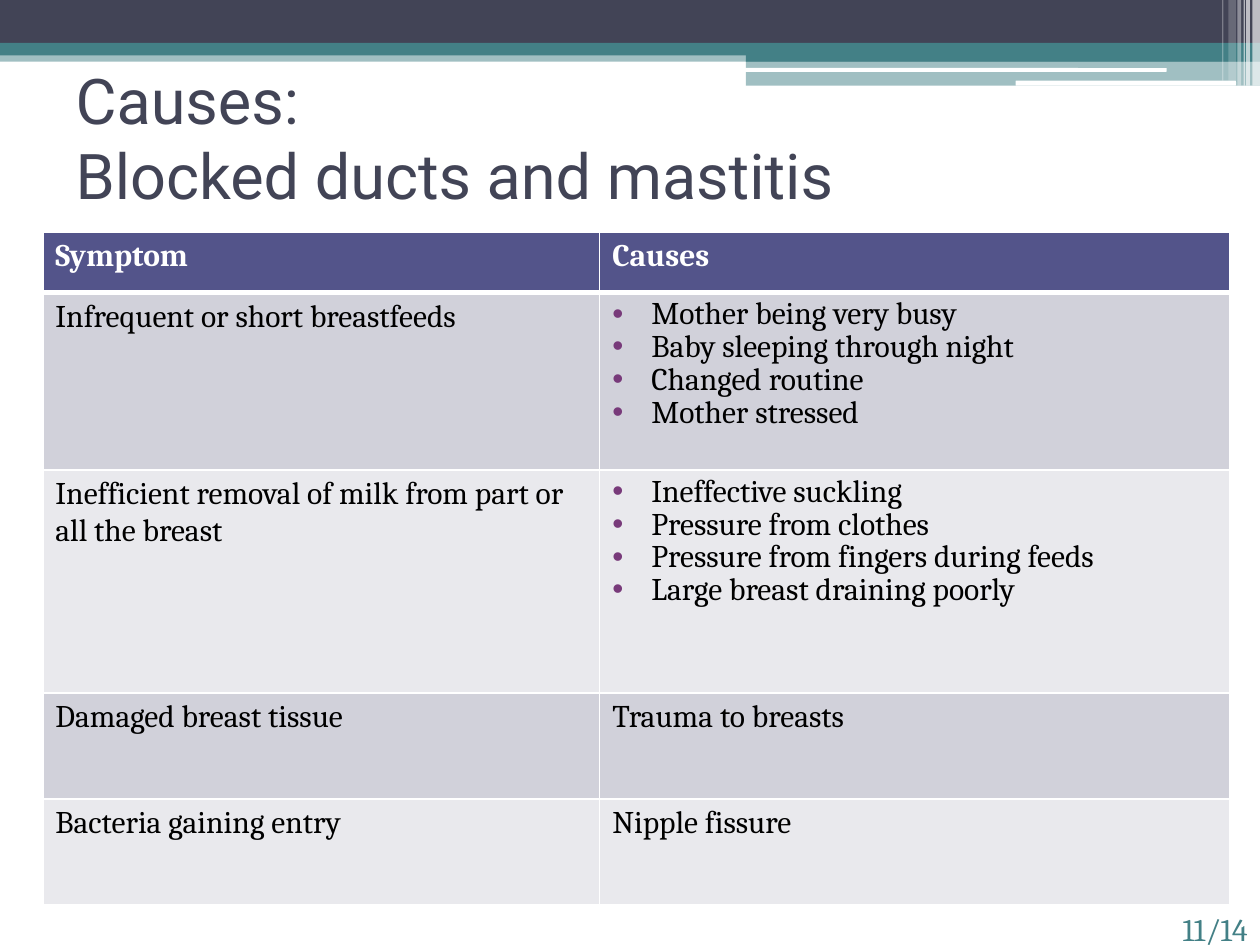
from dataclasses import dataclass

from lxml import etree
from pptx import Presentation
from pptx.dml.color import RGBColor
from pptx.enum.shapes import MSO_SHAPE
from pptx.enum.text import MSO_ANCHOR, MSO_AUTO_SIZE, PP_ALIGN
from pptx.oxml.ns import qn
from pptx.util import Inches, Pt

RECT, ROUND = MSO_SHAPE.RECTANGLE, MSO_SHAPE.ROUNDED_RECTANGLE
MIDDLE = MSO_ANCHOR.MIDDLE
LEFT, RIGHT = PP_ALIGN.LEFT, PP_ALIGN.RIGHT
NO_AUTOFIT = MSO_AUTO_SIZE.NONE

WHITE = RGBColor(0xFF, 0xFF, 0xFF)
BLACK = RGBColor(0x00, 0x00, 0x00)
SLATE = RGBColor(0x42, 0x44, 0x56)
TEAL = RGBColor(0x43, 0x80, 0x86)
INDIGO = RGBColor(0x53, 0x54, 0x8A)
PURPLE = RGBColor(0x78, 0x3A, 0x7A)
BAND_DARK = RGBColor(0xD1, 0xD1, 0xDA)
BAND_LIGHT = RGBColor(0xE9, 0xE9, 0xED)

GRID_COLS, GRID_ROWS = 100, 75
UNIT = Inches(10) // GRID_COLS
BODY_FONT, TITLE_FONT = "Cambria", "Roboto"


@dataclass
class Bar:
    col: float
    row: float
    cols: float
    rows: float
    color: RGBColor
    alpha: int = 100
    kind: int = RECT


@dataclass
class CauseRow:
    height: float
    symptom: str
    causes: list[str]


BARS = [
    Bar(0, 4, 100, 0.9, TEAL, 50),
    Bar(0, 0, 100, 3.4, SLATE),
    Bar(0, 3.4, 100, 1, TEAL),
    Bar(59.2, 3.9, 40.8, 1, TEAL),
    Bar(59.2, 4.8, 40.8, 2, TEAL, 50),
    Bar(59.1, 5.4, 33.5, 0.3, WHITE, kind=ROUND),
    Bar(80.6, 6.4, 17.5, 0.4, WHITE, kind=ROUND),
    Bar(99.4, 0, 0.6, 6.8, WHITE, 65),
    Bar(98.9, 0, 0.3, 6.8, WHITE, 65),
    Bar(98.7, 0, 0.1, 6.8, WHITE, 60),
    Bar(98.2, 0, 0.3, 6.8, WHITE, 40),
    Bar(97.5, 0, 0.6, 6.4, WHITE, 20),
    Bar(97, 0, 0.1, 6.4, WHITE, 30),
]

COLUMN_WIDTHS = [44.2, 50]
ROWS = [
    CauseRow(4.8, "Symptom", ["Causes"]),
    CauseRow(14.1, "Infrequent or short breastfeeds",
             ["Mother being very busy", "Baby sleeping through night",
              "Changed routine", "Mother stressed"]),
    CauseRow(17.7, "Inefficient removal of milk from part or all the breast",
             ["Ineffective suckling", "Pressure from clothes",
              "Pressure from fingers during feeds",
              "Large breast draining poorly"]),
    CauseRow(8.4, "Damaged breast tissue", ["Trauma to breasts"]),
    CauseRow(8.4, "Bacteria gaining entry", ["Nipple fissure"]),
]


def grid(units: float) -> int:
    return round(units * UNIT)


def place(s, col: float, row: float, cols: float, rows: float) -> None:
    s.left, s.top = grid(col), grid(row)
    s.width, s.height = grid(cols), grid(rows)


def add_run(p, text: str, size: float, font: str, color: RGBColor,
            bold: bool = False) -> None:
    r = p.add_run()
    r.text = text
    r.font.size, r.font.name, r.font.bold = Pt(size), font, bold
    r.font.color.rgb = color


def add_bar(slide, bar: Bar) -> None:
    s = slide.shapes.add_shape(bar.kind, 0, 0, 0, 0)
    place(s, bar.col, bar.row, bar.cols, bar.rows)
    s.shadow.inherit = False
    s.line.fill.background()
    s.fill.solid()
    s.fill.fore_color.rgb = bar.color
    if bar.alpha < 100:
        color = s.fill._xPr.find(".//" + qn("a:srgbClr"))
        etree.SubElement(color, qn("a:alpha"), val=str(bar.alpha * 1000))


def add_title(slide, lines: list[str]) -> None:
    title = slide.shapes.title
    place(title, 5, 5, 90, 11.7)
    tf = title.text_frame
    tf.auto_size, tf.vertical_anchor = NO_AUTOFIT, MIDDLE
    p = tf.paragraphs[0]
    p.alignment = LEFT
    for i, line in enumerate(lines):
        if i:
            p.add_line_break()
        add_run(p, line, 36, TITLE_FONT, SLATE)


def set_bullet(p) -> None:
    p.line_spacing = 0.9
    pPr = p._p.get_or_add_pPr()
    indent = grid(3.1)
    pPr.set("marL", str(indent))
    pPr.set("indent", str(-indent))
    color = etree.SubElement(pPr, qn("a:buClr"))
    etree.SubElement(color, qn("a:srgbClr"), val=str(PURPLE))
    etree.SubElement(pPr, qn("a:buFont"), typeface="Arial")
    etree.SubElement(pPr, qn("a:buChar"), char="•")


def set_borders(cell, top: float, bottom: float) -> None:
    tcPr = cell._tc.get_or_add_tcPr()
    for side, width in (("L", 1), ("R", 1), ("T", top), ("B", bottom)):
        ln = etree.SubElement(tcPr, qn(f"a:ln{side}"), w=str(Pt(width)))
        fill = etree.SubElement(ln, qn("a:solidFill"))
        etree.SubElement(fill, qn("a:srgbClr"), val=str(WHITE))


def fill_cell(cell, lines: list[str], row: int) -> None:
    header = row == 0
    set_borders(cell, 3 if row == 1 else 1, 3 if header else 1)
    cell.fill.solid()
    cell.fill.fore_color.rgb = (
        INDIGO if header else BAND_DARK if row % 2 else BAND_LIGHT)
    tf = cell.text_frame
    for i, line in enumerate(lines):
        p = tf.add_paragraph() if i else tf.paragraphs[0]
        if len(lines) > 1:
            set_bullet(p)
        add_run(p, line, 18, BODY_FONT, WHITE if header else BLACK, header)


def add_causes_table(slide, rows: list[CauseRow]) -> None:
    frame = slide.shapes.add_table(
        len(rows), len(COLUMN_WIDTHS), grid(3.4), grid(18.4),
        grid(sum(COLUMN_WIDTHS)), grid(sum(row.height for row in rows)))
    table = frame.table
    for column, width in zip(table.columns, COLUMN_WIDTHS):
        column.width = grid(width)
    for i, row in enumerate(rows):
        table.rows[i].height = grid(row.height)
        fill_cell(table.cell(i, 0), [row.symptom], i)
        fill_cell(table.cell(i, 1), row.causes, i)


def add_page_number(slide, text: str) -> None:
    s = slide.shapes.add_textbox(0, 0, 0, 0)
    place(s, 85.8, 71.7, 14.2, 3.3)
    tf = s.text_frame
    tf.word_wrap = True
    p = tf.paragraphs[0]
    p.alignment = RIGHT
    add_run(p, text, 18, BODY_FONT, TEAL)


def main() -> None:
    prs = Presentation()
    prs.slide_width, prs.slide_height = GRID_COLS * UNIT, GRID_ROWS * UNIT
    slide = prs.slides.add_slide(prs.slide_layouts[5])
    for bar in BARS:
        add_bar(slide, bar)
    add_title(slide, ["Causes:", "Blocked ducts and mastitis"])
    add_causes_table(slide, ROWS)
    add_page_number(slide, "11/14")
    prs.save("out.pptx")


if __name__ == "__main__":
    main()
